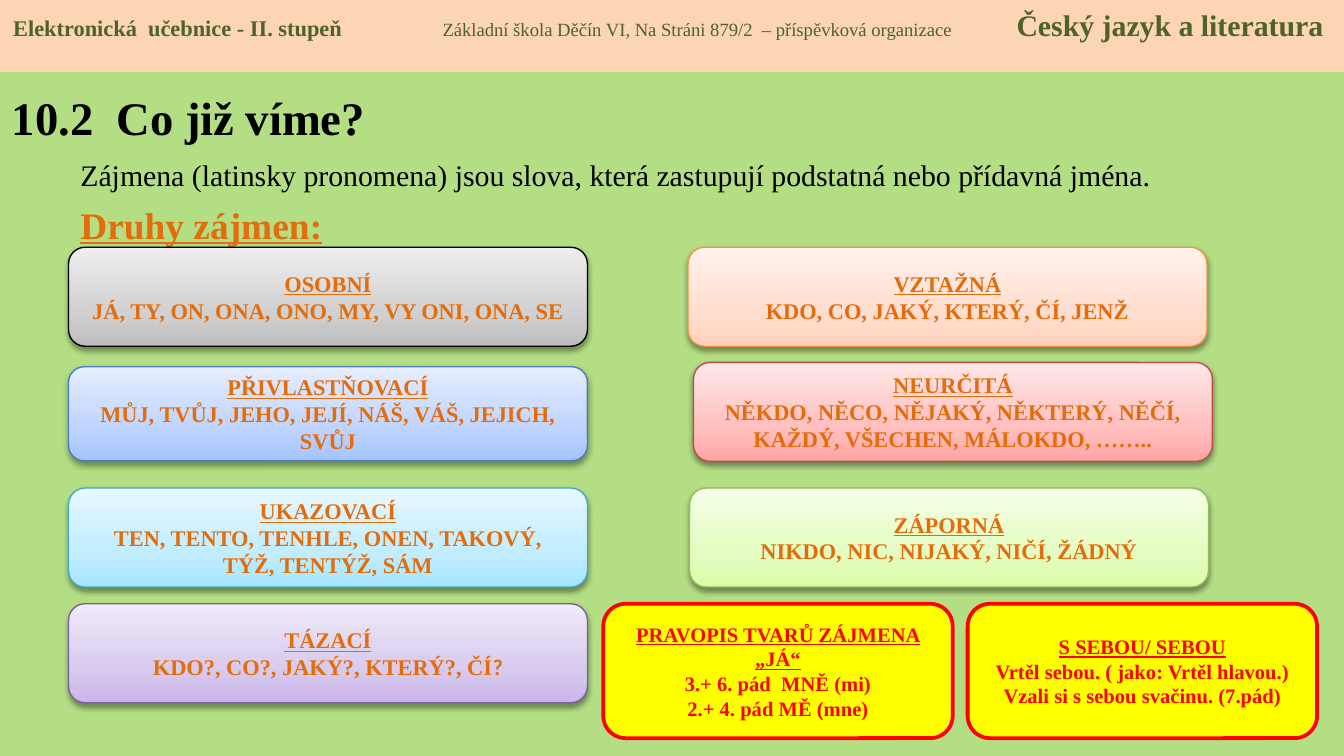
from copy import deepcopy

from lxml import etree
from pptx import Presentation
from pptx import util as u
from pptx.dml.color import RGBColor
from pptx.enum import shapes, text
from pptx.oxml.ns import qn

COLORS = {
    "page": "B3DE84", "banner": "FCD5B5", "banner text": "4F6228",
    "ink": "000000", "accent": "E46C0A", "rule": "FF0000", "rule fill": "FFFF00",
}
# Line colour, then the gradient from the bottom of the card to its top
CARD_COLORS = {
    "grey": ("000000", "BDBDBD", "D1D1D1", "EEEEEE"),
    "blue": ("4B7EBC", "A4C4FF", "BFD4FF", "E6EEFF"),
    "aqua": ("46AAC5", "A7E6FF", "C1EDFF", "E7F8FF"),
    "purple": ("7D60A0", "C9B5E8", "D8CBEE", "F0EAF9"),
    "orange": ("F69240", "FFD2BD", "FFDED0", "FFF2ED"),
    "red": ("BF4C48", "FFA6A5", "FFC0BF", "FFE7E7"),
    "green": ("98B955", "DAFDA7", "E4FCC2", "F5FFE7"),
}
LEFT, CARD_WIDTH, CARD_HEIGHT = 36.7, 278, 53
ROWS = (132.5, 196.5, 261.5, 323.5)


def rgb(value):
    return RGBColor.from_string(COLORS.get(value, value))


class SlideBuilder:
    """Holds the text style and the slide being filled."""

    def __init__(self, page, font="Times New Roman"):
        self.page = page
        self.font = font

    def background(self, color):
        fill = self.page.background.fill
        fill.solid()
        fill.fore_color.rgb = rgb(color)

    def style(self, para, size, color, bold=False, underline=None):
        font = para.font
        font.name, font.size, font.bold = self.font, u.Pt(size), bold
        font.color.rgb = rgb(color)
        font.underline = underline

    def textbox(self, place, anchor=text.MSO_ANCHOR.TOP):
        box = self.page.shapes.add_textbox(*map(u.Pt, place))
        frame = box.text_frame
        frame.word_wrap = True
        frame.vertical_anchor = anchor
        return frame

    def shape(self, kind, place, fill=None, line=None, width=0.75):
        box = self.page.shapes.add_shape(kind, *map(u.Pt, place))
        box.shadow.inherit = False
        if fill:
            box.fill.solid()
            box.fill.fore_color.rgb = rgb(fill)
        if line:
            box.line.color.rgb = rgb(line)
            box.line.width = u.Pt(width)
        else:
            box.line.fill.background()
        return box

    def banner(self, place, spans, tab_stops):
        """Draw a strip whose spans (text, size, bold) start at tab stops."""
        box = self.shape(shapes.MSO_SHAPE.RECTANGLE, place, "banner")
        frame = box.text_frame
        frame.vertical_anchor = text.MSO_ANCHOR.TOP
        para = frame.paragraphs[0]
        para.alignment = text.PP_ALIGN.LEFT
        tabs = etree.Element(qn("a:tabLst"))
        for stop in tab_stops:
            etree.SubElement(tabs, qn("a:tab"), pos=str(u.Pt(stop)), algn="l")
        para._p.get_or_add_pPr().append(tabs)
        self.style(para, 12, "banner text")
        for index, (words, size, bold) in enumerate(spans):
            span = para.add_run()
            span.text = "\t" + words if index else words
            span.font.size, span.font.bold = u.Pt(size), bold

    def centred(self, box, lines, size, color):
        """Write bold lines, the first one underlined as a heading."""
        frame = box.text_frame
        frame.word_wrap = True
        frame.vertical_anchor = text.MSO_ANCHOR.MIDDLE
        for index, words in enumerate(lines):
            para = frame.add_paragraph() if index else frame.paragraphs[0]
            para.text = words
            para.alignment = text.PP_ALIGN.CENTER
            self.style(para, size, color, True, index == 0)

    def card(self, place, palette, lines):
        line, *stops = CARD_COLORS[palette]
        box = self.shape(shapes.MSO_SHAPE.ROUNDED_RECTANGLE, place, line=line)
        box.fill.gradient()
        box.fill.gradient_angle = 90
        properties = box._element.spPr
        stop_list = properties.find(".//" + qn("a:gsLst"))
        stop_list.insert(1, deepcopy(stop_list[0]))
        for stop, color, position in zip(box.fill.gradient_stops, stops, (0, 0.35, 1)):
            stop.color.rgb = rgb(color)
            stop.position = position
        shadow = etree.SubElement(
            properties.find(qn("a:effectLst")), qn("a:outerShdw"),
            blurRad=str(u.Pt(3.1)), dist=str(u.Pt(1.6)), dir="5400000", rotWithShape="0")
        shade = etree.SubElement(shadow, qn("a:srgbClr"), val=COLORS["ink"])
        etree.SubElement(shade, qn("a:alpha"), val="38000")
        self.centred(box, lines, 12, "accent")
        return box

    def rule(self, place, lines):
        box = self.shape(shapes.MSO_SHAPE.ROUNDED_RECTANGLE, place, "rule fill", "rule", 2)
        self.centred(box, lines, 11, "rule")


def main():
    deck = Presentation()
    deck.slide_width, deck.slide_height = u.Pt(720), u.Pt(405)
    slide = SlideBuilder(deck.slides.add_slide(deck.slide_layouts[6]))
    slide.background("page")

    title = slide.textbox((-0.7, 39, 648, 47), text.MSO_ANCHOR.MIDDLE).paragraphs[0]
    title.text = "10.2  Co již víme?"
    slide.style(title, 25, "ink", True)

    body = slide.textbox((36, 66, 648, 295))
    body.margin_top = u.Pt(18)
    definition = body.paragraphs[0]
    definition.text = ("Zájmena (latinsky pronomena) jsou slova, která zastupují "
                       "podstatná nebo přídavná jména.")
    slide.style(definition, 16, "ink")
    kinds = body.add_paragraph()
    kinds.text = "Druhy zájmen:"
    kinds.space_before = u.Pt(5)
    slide.style(kinds, 20, "accent", True, True)

    slide.banner((0, 0, 720, 38.6), (
        ("Elektronická  učebnice - II. stupeň", 12, True),
        ("Základní škola Děčín VI, Na Stráni 879/2  – příspěvková organizace", 10, False),
        ("Český jazyk a literatura", 16, True),
    ), (230, 537.5))

    cards = (
        (LEFT, ROWS[0], CARD_HEIGHT, "grey", "OSOBNÍ",
         "JÁ, TY, ON, ONA, ONO, MY, VY ONI, ONA, SE"),
        (LEFT, ROWS[1], 50.4, "blue", "PŘIVLASTŇOVACÍ",
         "MŮJ, TVŮJ, JEHO, JEJÍ, NÁŠ, VÁŠ, JEJICH, SVŮJ"),
        (LEFT, ROWS[2], CARD_HEIGHT, "aqua", "UKAZOVACÍ",
         "TEN, TENTO, TENHLE, ONEN, TAKOVÝ, TÝŽ, TENTÝŽ, SÁM"),
        (368.6, ROWS[0], CARD_HEIGHT, "orange", "VZTAŽNÁ",
         "KDO, CO, JAKÝ, KTERÝ, ČÍ, JENŽ"),
        (371.5, 194.2, CARD_HEIGHT, "red", "NEURČITÁ",
         "NĚKDO, NĚCO, NĚJAKÝ, NĚKTERÝ, NĚČÍ, KAŽDÝ, VŠECHEN, MÁLOKDO, …….."),
        (369.4, ROWS[2], CARD_HEIGHT, "green", "ZÁPORNÁ",
         "NIKDO, NIC, NIJAKÝ, NIČÍ, ŽÁDNÝ"),
    )
    for left, top, height, palette, *lines in cards:
        slide.card((left, top, CARD_WIDTH, height), palette, lines)

    questions = slide.card((LEFT, ROWS[3], CARD_WIDTH, CARD_HEIGHT), "purple",
                           ("TÁZACÍ", "KDO?, CO?, JAKÝ?, KTERÝ?, ČÍ"))
    mark = questions.text_frame.paragraphs[1].add_run()
    mark.text = "?"
    mark.font.name = "Calibri"

    slide.rule((323.2, ROWS[3], 187.2, 72), (
        "PRAVOPIS TVARŮ ZÁJMENA „JÁ“", "3.+ 6. pád  MNĚ (mi)", "2.+ 4. pád MĚ (mne)"))
    slide.rule((518.4, ROWS[3], 187.2, 72), (
        "S SEBOU/ SEBOU", "Vrtěl sebou. ( jako: Vrtěl hlavou.)",
        "Vzali si s sebou svačinu. (7.pád)"))

    deck.save("out.pptx")


if __name__ == "__main__":
    main()
